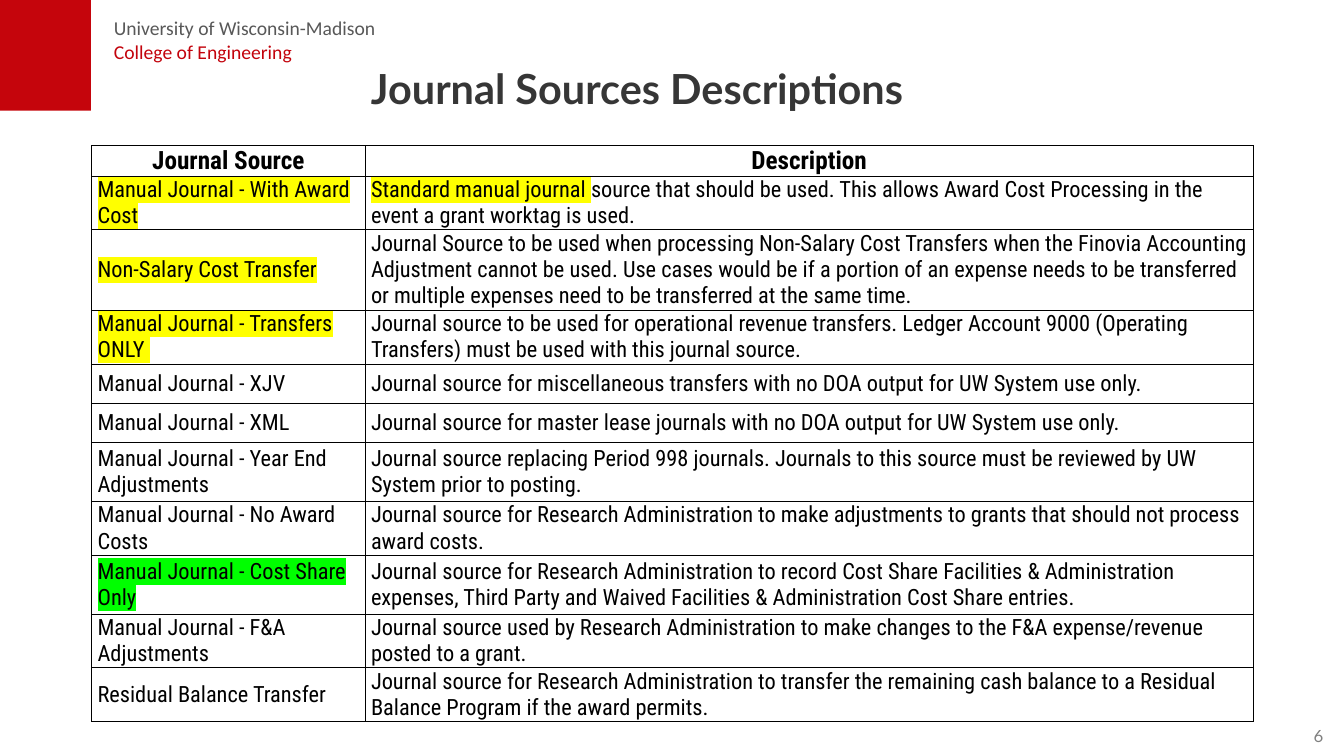
from dataclasses import dataclass

from lxml import etree
from pptx import Presentation
from pptx.dml.color import RGBColor
from pptx.enum.shapes import MSO_SHAPE
from pptx.enum.text import MSO_ANCHOR, MSO_AUTO_SIZE, PP_ALIGN
from pptx.oxml.ns import qn
from pptx.slide import Slide
from pptx.table import _Cell
from pptx.text.text import TextFrame, _Paragraph, _Run
from pptx.util import Cm, Pt

RECTANGLE = MSO_SHAPE.RECTANGLE
MIDDLE = MSO_ANCHOR.MIDDLE
BOTTOM = MSO_ANCHOR.BOTTOM
TOP = MSO_ANCHOR.TOP
LEFT = PP_ALIGN.LEFT
CENTER = PP_ALIGN.CENTER
RIGHT = PP_ALIGN.RIGHT
FIT_SHAPE = MSO_AUTO_SIZE.SHAPE_TO_FIT_TEXT
NO_FIT = MSO_AUTO_SIZE.NONE

TABLE_FONT = "Roboto Condensed"
BLACK = "000000"
YELLOW = "FFFF00"
GREEN = "00FF00"
HEADINGS = ("Journal Source", "Description")
COLUMN_WIDTHS = (6.89, 22.38)
HEADING_HEIGHT = 0.51
ROW_HEIGHT = 0.99


@dataclass
class Label:
    lines: list[str]
    left: float
    top: float
    width: float
    height: float
    font: str
    size: float
    colors: list[str]
    bold: bool = False
    align: PP_ALIGN = LEFT
    anchor: MSO_ANCHOR = TOP
    right_margin: float = 0
    bottom_margin: float = 0.13
    wrap: bool = True
    spacing: float = 1.0
    auto_size: MSO_AUTO_SIZE = NO_FIT


@dataclass
class JournalSource:
    name: str
    description: str
    highlight: str = ""
    marked_start: str = ""
    height: float = ROW_HEIGHT


LABELS = [
    Label(["University of Wisconsin-Madison", "College of Engineering"], 2.87, 0.28, 11.96, 1.45,
          "Calibri", 14, ["585858", "C3030C"], right_margin=0.25, auto_size=FIT_SHAPE),
    Label(["6"], 31.57, 18.03, 2.29, 1.02, "Lato", 12, ["808080"], align=RIGHT, anchor=MIDDLE,
          right_margin=0.51, wrap=False),
    Label(["Journal Sources Descriptions"], 9.35, 1.47, 15.16, 1.4, "Lato", 29.6, ["363636"],
          bold=True, anchor=BOTTOM, bottom_margin=0, spacing=0.9),
]

SOURCES = [
    JournalSource("Manual Journal - With Award Cost",
                  "source that should be used. This allows Award Cost Processing in the event a grant "
                  "worktag is used.", YELLOW, "Standard manual journal "),
    JournalSource("Non-Salary Cost Transfer",
                  "Journal Source to be used when processing Non-Salary Cost Transfers when the Finovia "
                  "Accounting Adjustment cannot be used. Use cases would be if a portion of an expense "
                  "needs to be transferred or multiple expenses need to be transferred at the same time.",
                  YELLOW, height=1.98),
    JournalSource("Manual Journal - Transfers ONLY ",
                  "Journal source to be used for operational revenue transfers. Ledger Account 9000 "
                  "(Operating Transfers) must be used with this journal source.", YELLOW),
    JournalSource("Manual Journal - XJV",
                  "Journal source for miscellaneous transfers with no DOA output for UW System use only."),
    JournalSource("Manual Journal - XML",
                  "Journal source for master lease journals with no DOA output for UW System use only."),
    JournalSource("Manual Journal - Year End Adjustments",
                  "Journal source replacing Period 998 journals. Journals to this source must be "
                  "reviewed by UW System prior to posting.", height=1.48),
    JournalSource("Manual Journal - No Award Costs",
                  "Journal source for Research Administration to make adjustments to grants that "
                  "should not process award costs."),
    JournalSource("Manual Journal - Cost Share Only",
                  "Journal source for Research Administration to record Cost Share Facilities & "
                  "Administration expenses, Third Party and Waived Facilities & Administration Cost "
                  "Share entries.", GREEN, height=1.48),
    JournalSource("Manual Journal - F&A Adjustments",
                  "Journal source used by Research Administration to make changes to the F&A "
                  "expense/revenue posted to a grant."),
    JournalSource("Residual Balance Transfer",
                  "Journal source for Research Administration to transfer the remaining cash balance "
                  "to a Residual Balance Program if the award permits."),
]


def rgb(value: str) -> RGBColor:
    return RGBColor.from_string(value)


def format_run(run: _Run, font: str, size: float, color: str, bold: bool = False) -> None:
    run.font.name = font
    run.font.size = Pt(size)
    run.font.bold = bold
    run.font.color.rgb = rgb(color)


def highlight_run(run: _Run, color: str) -> None:
    highlight = etree.Element(qn("a:highlight"))
    etree.SubElement(highlight, qn("a:srgbClr"), val=color)
    run.font._element.find(qn("a:solidFill")).addnext(highlight)


def set_margins(target: TextFrame | _Cell, left: float, top: float, right: float, bottom: float) -> None:
    target.margin_left, target.margin_top = Cm(left), Cm(top)
    target.margin_right, target.margin_bottom = Cm(right), Cm(bottom)


def add_label(slide: Slide, label: Label) -> None:
    box = slide.shapes.add_textbox(Cm(label.left), Cm(label.top), Cm(label.width), Cm(label.height))
    frame = box.text_frame
    frame.text = "\n".join(label.lines)
    frame.word_wrap = label.wrap
    frame.auto_size = label.auto_size
    frame.vertical_anchor = label.anchor
    set_margins(frame, 0, 0.13, label.right_margin, label.bottom_margin)
    for paragraph, color in zip(frame.paragraphs, label.colors):
        paragraph.alignment = label.align
        paragraph.line_spacing = label.spacing
        format_run(paragraph.runs[0], label.font, label.size, color, label.bold)


def style_cell(cell: _Cell, left_margin: float) -> _Paragraph:
    cell.vertical_anchor = MIDDLE
    set_margins(cell, left_margin, 0, 0, 0)
    properties = cell._tc.get_or_add_tcPr()
    for side in ("lnL", "lnR", "lnT", "lnB"):
        line = etree.SubElement(properties, qn(f"a:{side}"), w=str(Pt(0.5)))
        fill = etree.SubElement(line, qn("a:solidFill"))
        etree.SubElement(fill, qn("a:srgbClr"), val=BLACK)
    cell.fill.background()
    return cell.text_frame.paragraphs[0]


def fill_cell(cell: _Cell, text: str, highlight: str = "") -> _Paragraph:
    paragraph = style_cell(cell, 0.15)
    paragraph.text = text
    format_run(paragraph.runs[0], TABLE_FONT, 16, BLACK)
    if highlight:
        highlight_run(paragraph.runs[0], highlight)
    return paragraph


def add_source_table(slide: Slide) -> None:
    heights = [HEADING_HEIGHT] + [source.height for source in SOURCES]
    frame = slide.shapes.add_table(len(heights), len(HEADINGS), Cm(2.31), Cm(3.67),
                                   Cm(sum(COLUMN_WIDTHS)), Cm(sum(heights)))
    table = frame.table
    table.first_row = table.horz_banding = False
    for column, width in zip(table.columns, COLUMN_WIDTHS):
        column.width = Cm(width)
    for row, height in zip(table.rows, heights):
        row.height = Cm(height)
    for index, heading in enumerate(HEADINGS):
        paragraph = style_cell(table.cell(0, index), 0)
        paragraph.text = heading
        paragraph.alignment = CENTER
        format_run(paragraph.runs[0], TABLE_FONT, 18, BLACK, True)
    for index, source in enumerate(SOURCES, start=1):
        fill_cell(table.cell(index, 0), source.name, source.highlight)
        description = table.cell(index, 1)
        if source.marked_start:
            run = fill_cell(description, source.marked_start, source.highlight).add_run()
            run.text = source.description
            format_run(run, TABLE_FONT, 16, BLACK)
        else:
            fill_cell(description, source.description)


def main() -> None:
    presentation = Presentation()
    presentation.slide_width, presentation.slide_height = Cm(33.87), Cm(19.05)
    slide = presentation.slides.add_slide(presentation.slide_layouts[6])
    corner = slide.shapes.add_shape(RECTANGLE, 0, 0, Cm(2.29), Cm(2.79))
    corner.shadow.inherit = False
    corner.fill.solid()
    corner.fill.fore_color.rgb = rgb("C5050C")
    corner.line.fill.background()
    for label in LABELS:
        add_label(slide, label)
    add_source_table(slide)
    presentation.save("out.pptx")


if __name__ == "__main__":
    main()
